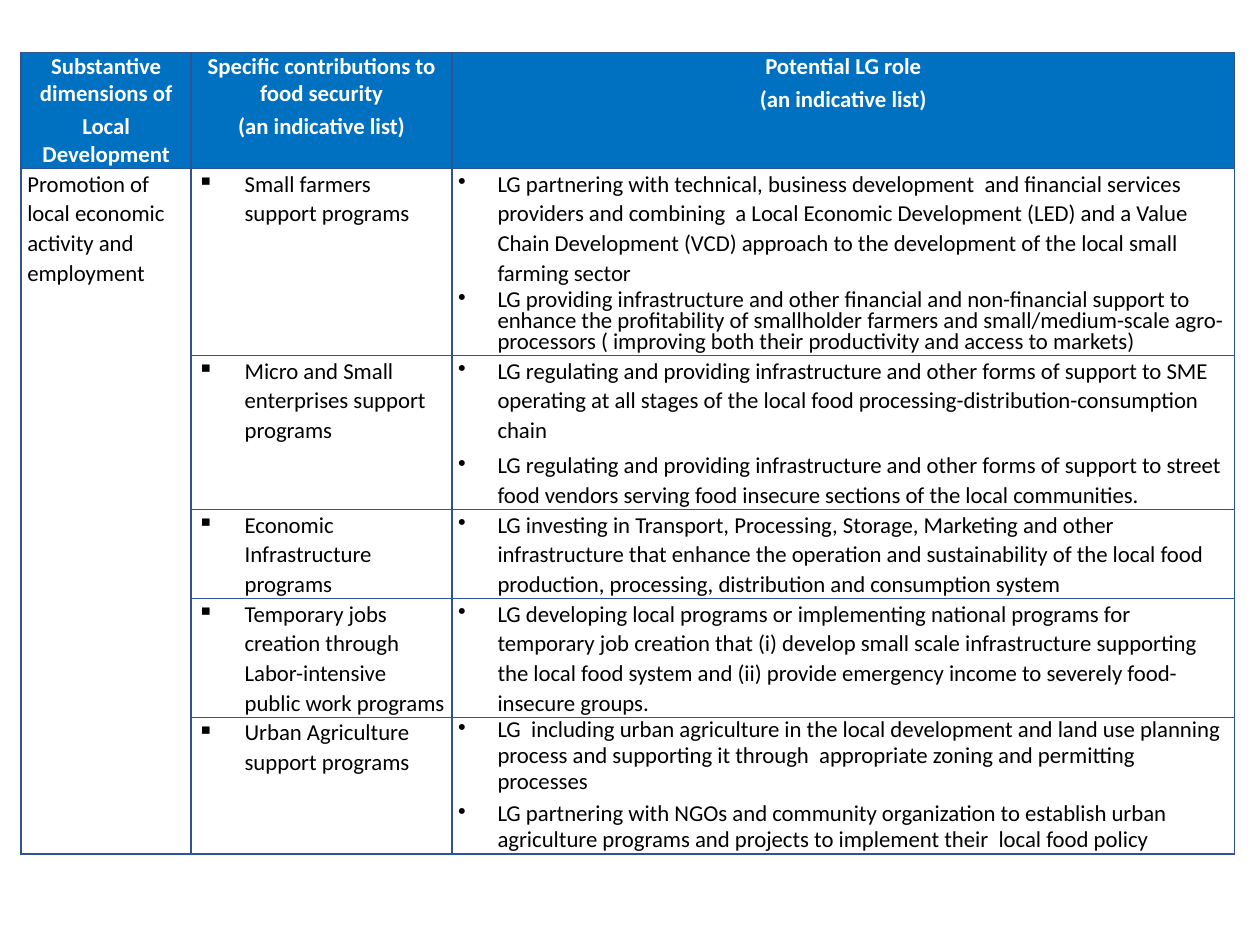
from dataclasses import dataclass

from lxml import etree
from pptx import Presentation
from pptx.dml.color import RGBColor
from pptx.enum.text import PP_ALIGN
from pptx.oxml.ns import qn
from pptx.table import _Cell
from pptx.util import Pt

CENTER, LEFT = PP_ALIGN.CENTER, PP_ALIGN.LEFT
COLORS = {"header": "0070C0", "border": "2F5496", "header_text": "FFFFFF", "body_text": "000000"}
FONT_NAME = "Calibri"
FONT_SIZE = Pt(13)
BORDER_WIDTH = Pt(1)
BORDER_SIDES = ("a:lnL", "a:lnR", "a:lnT", "a:lnB")
COLUMN_WIDTHS = (Pt(97.2), Pt(149), Pt(447.2))
HEADER_HEIGHT = Pt(66)
BODY_SPACING = 1.07


@dataclass(frozen=True)
class Look:
    color: str
    bold: bool = False
    align: PP_ALIGN = LEFT
    bullet: str = ""
    indent: int = 0


@dataclass(frozen=True)
class Entry:
    text: str
    spacing: float | int | None = BODY_SPACING


@dataclass(frozen=True)
class Program:
    contribution: str
    roles: tuple[Entry, ...]
    height: int


HEADER_LOOK = Look("header_text", bold=True, align=CENTER)
DIMENSION_LOOK = Look("body_text")
CONTRIBUTION_LOOK = Look("body_text", bullet="▪", indent=Pt(27))
ROLE_LOOK = Look("body_text", bullet="•", indent=Pt(22.5))

HEADERS = (
    ("Substantive dimensions of", "Local Development"),
    ("Specific contributions to food security", "(an indicative list)"),
    ("Potential LG role", "(an indicative list)"),
)
DIMENSION = "Promotion of local economic activity and employment"
PROGRAMS = (
    Program("Small farmers support programs", (
        Entry("LG partnering with technical, business development  and financial services "
              "providers and combining  a Local Economic Development (LED) and a Value Chain "
              "Development (VCD) approach to the development of the local small farming sector"),
        Entry("LG providing infrastructure and other financial and non-financial support to "
              "enhance the profitability of smallholder farmers and small/medium-scale "
              "agro-processors ( improving both their productivity and access to markets)", Pt(12)),
    ), Pt(106.5)),
    Program("Micro and Small enterprises support programs", (
        Entry("LG regulating and providing infrastructure and other forms of support to SME "
              "operating at all stages of the local food processing-distribution-consumption chain"),
        Entry("LG regulating and providing infrastructure and other forms of support to street "
              "food vendors serving food insecure sections of the local communities."),
    ), Pt(88)),
    Program("Economic Infrastructure programs", (
        Entry("LG investing in Transport, Processing, Storage, Marketing and other infrastructure "
              "that enhance the operation and sustainability of the local food production, "
              "processing, distribution and consumption system"),
    ), Pt(50.5)),
    Program("Temporary jobs creation through Labor-intensive public work programs", (
        Entry("LG developing local programs or implementing national programs for temporary job "
              "creation that (i) develop small scale infrastructure supporting the local food "
              "system and (ii) provide emergency income to severely food-insecure groups."),
    ), Pt(67.5)),
    Program("Urban Agriculture support programs", (
        Entry("LG  including urban agriculture in the local development and land use planning "
              "process and supporting it through  appropriate zoning and permitting processes", Pt(15)),
        Entry("LG partnering with NGOs and community organization to establish urban agriculture "
              "programs and projects to implement their  local food policy", Pt(15)),
    ), Pt(78)),
)


def write_entries(cell: _Cell, entries: tuple[Entry, ...], look: Look) -> None:
    frame = cell.text_frame
    for position, entry in enumerate(entries):
        paragraph = frame.add_paragraph() if position else frame.paragraphs[0]
        paragraph.text = entry.text
        paragraph.alignment = look.align
        paragraph.line_spacing = entry.spacing
        paragraph.space_before = Pt(1 if position else 0)
        paragraph.space_after = Pt(2)
        if look.bullet:
            properties = paragraph._p.get_or_add_pPr()
            properties.set("marL", str(look.indent))
            properties.set("indent", str(-look.indent))
            etree.SubElement(properties, qn("a:buChar"), char=look.bullet)
        font = paragraph.font
        font.name, font.size, font.bold = FONT_NAME, FONT_SIZE, look.bold
        font.color.rgb = RGBColor.from_string(COLORS[look.color])


def frame_cell(cell: _Cell, fill: str | None) -> None:
    cell.margin_left = cell.margin_right = Pt(3.6)
    cell.margin_top = cell.margin_bottom = Pt(0)
    properties = cell._tc.get_or_add_tcPr()
    for side in BORDER_SIDES:
        border = etree.SubElement(properties, qn(side), w=str(BORDER_WIDTH))
        paint = etree.SubElement(border, qn("a:solidFill"))
        etree.SubElement(paint, qn("a:srgbClr"), val=COLORS["border"])
    if fill:
        cell.fill.solid()
        cell.fill.fore_color.rgb = RGBColor.from_string(COLORS[fill])
    else:
        cell.fill.background()


def main() -> None:
    presentation = Presentation()
    presentation.slide_width, presentation.slide_height = Pt(720), Pt(540)
    slide = presentation.slides.add_slide(presentation.slide_layouts[6])
    heights = (HEADER_HEIGHT, *(program.height for program in PROGRAMS))
    roles_table = slide.shapes.add_table(
        len(heights), len(COLUMN_WIDTHS), Pt(12), Pt(30), sum(COLUMN_WIDTHS), sum(heights)
    ).table
    roles_table.first_row = roles_table.horz_banding = False
    for column, width in zip(roles_table.columns, COLUMN_WIDTHS):
        column.width = width
    for index, (row, height) in enumerate(zip(roles_table.rows, heights)):
        row.height = height
        for cell in row.cells:
            frame_cell(cell, None if index else "header")

    for column, lines in enumerate(HEADERS):
        write_entries(roles_table.cell(0, column), tuple(Entry(line, None) for line in lines), HEADER_LOOK)
    roles_table.cell(1, 0).merge(roles_table.cell(len(PROGRAMS), 0))
    write_entries(roles_table.cell(1, 0), (Entry(DIMENSION),), DIMENSION_LOOK)
    for index, program in enumerate(PROGRAMS, start=1):
        write_entries(roles_table.cell(index, 1), (Entry(program.contribution),), CONTRIBUTION_LOOK)
        write_entries(roles_table.cell(index, 2), program.roles, ROLE_LOOK)
    presentation.save("out.pptx")


if __name__ == "__main__":
    main()
